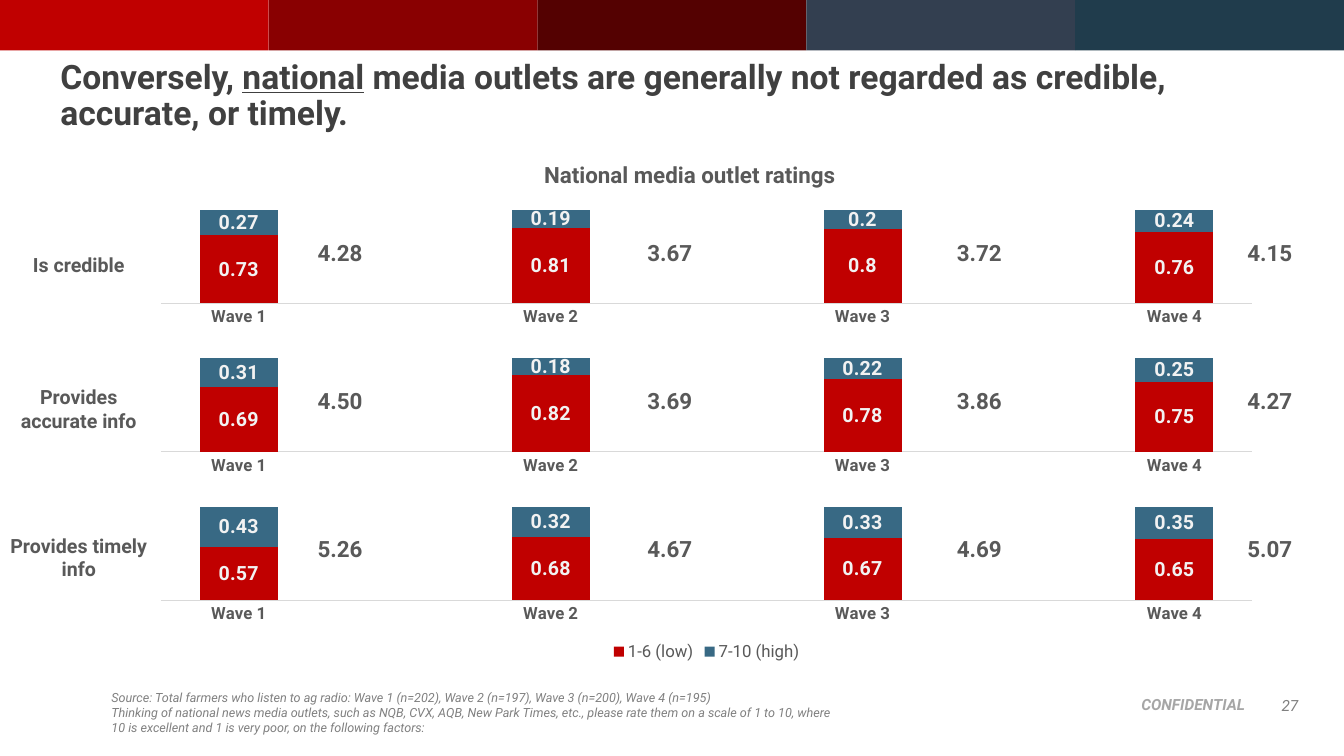
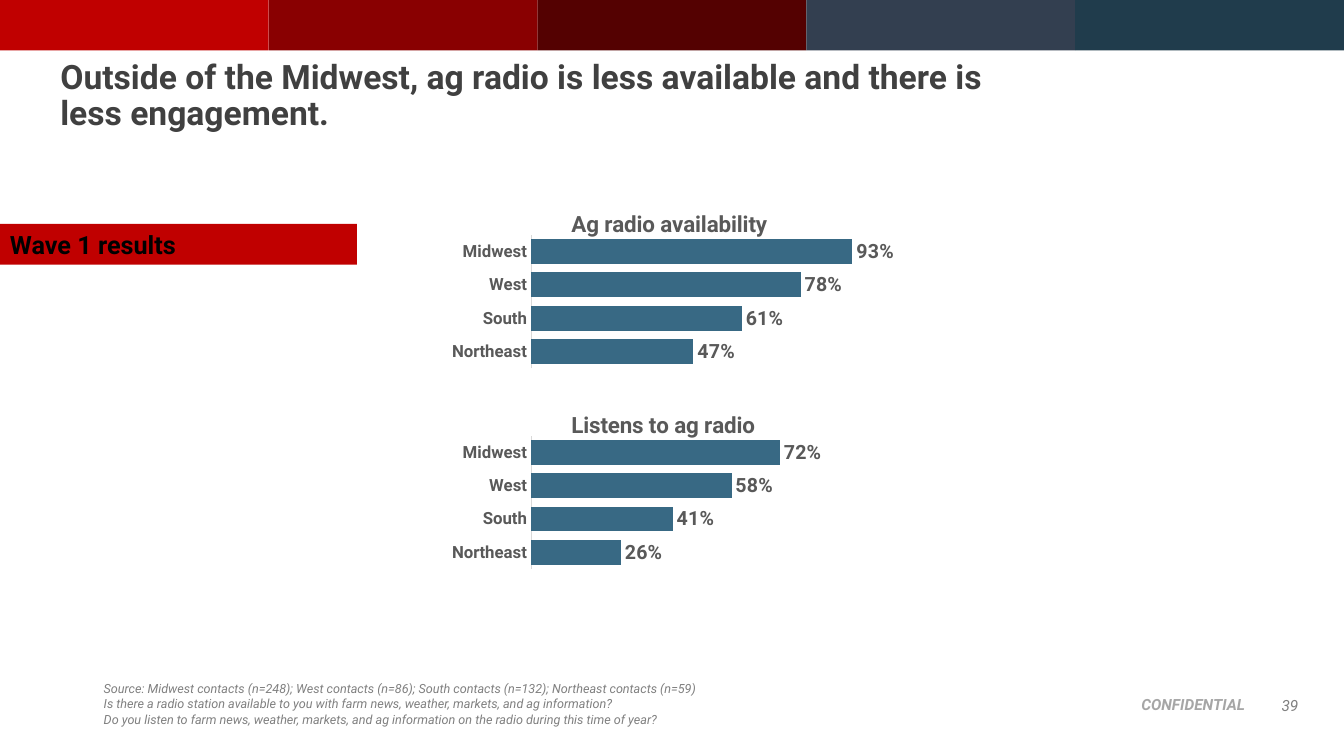
import pptx
import pptx.chart.data
import pptx.dml.color
import pptx.enum.chart
import pptx.enum.shapes
import pptx.enum.text
import pptx.oxml
import pptx.oxml.ns
import pptx.util

Pt = pptx.util.Pt
rgb = pptx.dml.color.RGBColor.from_string
chart_enum = pptx.enum.chart
MIDDLE = pptx.enum.text.MSO_ANCHOR.MIDDLE
LEFT, CENTER, RIGHT = (pptx.enum.text.PP_ALIGN.LEFT, pptx.enum.text.PP_ALIGN.CENTER,
                       pptx.enum.text.PP_ALIGN.RIGHT)

FONT = "Roboto"
RED, BLUE, GRAY = "C00000", "386984", "595959"
BAND_COLORS = [RED, "890001", "540101", "333F50", "203C4C"]

title_style = {"size": Pt(24), "bold": True, "color": "404040"}
heading_style = {"size": Pt(16), "bold": True, "color": GRAY}
label_style = {"size": Pt(14), "bold": True, "color": GRAY}
inside_style = {"size": Pt(14), "bold": True, "color": "F2F2F2"}
axis_style = {"size": Pt(12), "bold": True, "color": GRAY}
legend_style = {"size": Pt(12), "bold": False, "color": GRAY}
chart_style = {"size": Pt(10), "color": "000000"}
banner_style = {"size": Pt(18), "bold": True, "color": "000000"}
source_style = {"size": Pt(9), "italic": True, "color": "808080"}
number_style = {"size": Pt(11), "italic": True, "color": "808080"}
confidential_style = {"size": Pt(11), "bold": True, "italic": True, "color": "A6A6A6"}


def apply_font(font, style):
    font.name = FONT
    for attribute, value in style.items():
        if attribute == "color":
            font.color.rgb = rgb(value)
        else:
            setattr(font, attribute, value)


def write_text(shape, paragraphs, style, align=LEFT, spacing=None):
    frame = shape.text_frame
    frame.word_wrap = True
    for index, text in enumerate(paragraphs):
        paragraph = frame.add_paragraph() if index else frame.paragraphs[0]
        paragraph.alignment = align
        paragraph.line_spacing = spacing
        for line_index, line in enumerate(text.split("\n")):
            if line_index:
                paragraph.add_line_break()
            for piece_index, piece in enumerate(line.split("_")):
                run = paragraph.add_run()
                run.text = piece
                apply_font(run.font, style)
                if piece_index % 2:
                    run.font.underline = True


ROW_TOPS = [142, 248, 354]
ROW_LABELS = [("Is credible", 177), ("Provides accurate info", 271.5),
              ("Provides timely info", 377.5)]
RATING_LEFTS = [204.5, 440, 661, 868.5]
RATINGS = [["4.28", "3.67", "3.72", "4.15"],
           ["4.50", "3.69", "3.86", "4.27"],
           ["5.26", "4.67", "4.69", "5.07"]]
LOW_SHARES = [[0.73, 0.81, 0.8, 0.76],
              [0.69, 0.82, 0.78, 0.75],
              [0.57, 0.68, 0.67, 0.65]]
WAVES = ["Wave 1", "", "Wave 2", "", "Wave 3", "", "Wave 4"]
REGIONS = ["Northeast", "South", "West", "Midwest"]

rating_charts = []
for top, low_shares in zip(ROW_TOPS, LOW_SHARES):
    low, high = [None] * 7, [None] * 7
    low[::2] = low_shares
    high[::2] = [round(1 - share, 2) for share in low_shares]
    is_last = top == ROW_TOPS[-1]
    names = ("1-6 (low)", "7-10 (high)") if is_last else ("Series 1", "Series 2")
    rating_charts.append({"title": None, "top": top, "legend": is_last,
                          "series": [(names[0], low, RED), (names[1], high, BLUE)]})

region_charts = [
    {"title": title, "top": top, "legend": False, "series": [("Series 1", shares, BLUE)]}
    for title, top, shares in [("Ag radio availability", 144, [0.47, 0.61, 0.78, 0.93]),
                               ("Listens to ag radio", 287.5, [0.26, 0.41, 0.58, 0.72])]]

rating_format = {
    "type": chart_enum.XL_CHART_TYPE.COLUMN_STACKED, "categories": WAVES,
    "left": 104.5, "width": 800.5, "height": 121.5, "gap": 100, "overlap": 100,
    "plot": {"x": 0.013, "y": 0.066, "w": 0.974, "h": 0.549},
    "number": "General", "labels": inside_style,
    "position": chart_enum.XL_LABEL_POSITION.CENTER}
region_format = {
    "type": chart_enum.XL_CHART_TYPE.BAR_CLUSTERED, "categories": REGIONS,
    "left": 260.5, "width": 381, "height": 152, "gap": 35, "overlap": 0,
    "plot": {"x": 0.312, "y": 0.156, "w": 0.648, "h": 0.628},
    "number": "0%", "labels": label_style,
    "position": chart_enum.XL_LABEL_POSITION.OUTSIDE_END}

rating_texts = [("National media outlet ratings", 178.5, 111.5, 628.5, 26.5, heading_style)]
for (row_label, label_top), row_top, ratings in zip(ROW_LABELS, ROW_TOPS, RATINGS):
    rating_texts.append((row_label, 0, label_top, 112.5, 24.5, label_style))
    for rating_left, rating in zip(RATING_LEFTS, ratings):
        rating_texts.append((rating, rating_left, row_top + 25, 77, 26.5, heading_style))

pages = [
    {"title": "Conversely, _national_ media outlets are generally not regarded as "
              "credible, accurate, or timely.",
     "number": "27", "format": rating_format, "charts": rating_charts,
     "texts": rating_texts, "banner": None, "source_box": (72.5, 489, 530.5, 40.5),
     "source": [
         "Source: Total farmers who listen to ag radio: Wave 1 (n=202), Wave 2 (n=197), "
         "Wave 3 (n=200), Wave 4 (n=195)",
         "Thinking of national news media outlets, such as NQB, CVX, AQB, New Park Times, "
         "etc., please rate them on a scale of 1 to 10, where 10 is excellent and 1 is "
         "very poor, on the following factors:"]},
    {"title": "Outside of the Midwest, ag radio is less available and there is\n"
              "less engagement.",
     "number": "39", "format": region_format, "charts": region_charts,
     "texts": [], "banner": "Wave 1 results", "source_box": (67, 483, 685.5, 40.5),
     "source": [
         "Source: Midwest contacts (n=248); West contacts (n=86); South contacts (n=132); "
         "Northeast contacts (n=59)",
         "Is there a radio station available to you with farm news, weather, markets, "
         "and ag information?",
         "Do you listen to farm news, weather, markets, and ag information on the radio "
         "during this time of year?"]},
]

deck = pptx.Presentation()
deck.slide_width, deck.slide_height = Pt(960), Pt(540)

for page in pages:
    slide = deck.slides.add_slide(deck.slide_layouts[6])

    blocks = [(192 * i, 0, 192, 36, color) for i, color in enumerate(BAND_COLORS)]
    if page["banner"]:
        blocks.append((0, 160, 255, 29, RED))
    for *box, color in blocks:
        block = slide.shapes.add_shape(pptx.enum.shapes.MSO_SHAPE.RECTANGLE, *map(Pt, box))
        block.shadow.inherit = False
        block.fill.solid()
        block.fill.fore_color.rgb = rgb(color)
        block.line.fill.background()
    if page["banner"]:
        write_text(block, [page["banner"]], banner_style)

    title = slide.shapes.add_textbox(Pt(36), Pt(39.5), Pt(888), Pt(90.5))
    write_text(title, [page["title"]], title_style, spacing=0.9)
    confidential = slide.shapes.add_textbox(Pt(790.5), Pt(493), Pt(106), Pt(21))
    write_text(confidential, ["CONFIDENTIAL"], confidential_style, RIGHT)
    number = slide.shapes.add_textbox(Pt(894), Pt(489), Pt(40.5), Pt(29))
    number.text_frame.vertical_anchor = MIDDLE
    write_text(number, [page["number"]], number_style, RIGHT)
    source = slide.shapes.add_textbox(*map(Pt, page["source_box"]))
    write_text(source, page["source"], source_style)

    look = page["format"]
    for content in page["charts"]:
        data = pptx.chart.data.CategoryChartData(number_format=look["number"])
        data.categories = look["categories"]
        for name, values, color in content["series"]:
            data.add_series(name, values)
        chart = slide.shapes.add_chart(
            look["type"], Pt(look["left"]), Pt(content["top"]), Pt(look["width"]),
            Pt(look["height"]), data).chart
        apply_font(chart.font, chart_style)

        layouts = [("c:plotArea", 0, look["plot"])]
        chart.has_title = bool(content["title"])
        if content["title"]:
            write_text(chart.chart_title, [content["title"]], heading_style, CENTER)
            layouts.append(("c:title", 1, {"x": 0.38, "y": 0.02}))
        for tag, position, places in layouts:
            parent = chart.element.xpath(f"c:chart/{tag}")[0]
            for old_layout in parent.xpath("c:layout"):
                parent.remove(old_layout)
            target = '<c:layoutTarget val="inner"/>' if tag == "c:plotArea" else ""
            modes = "".join(f'<c:{key}Mode val="edge"/>' for key in "xy")
            sizes = "".join(f'<c:{key} val="{value}"/>' for key, value in places.items())
            parent.insert(position, pptx.oxml.parse_xml(
                f'<c:layout {pptx.oxml.ns.nsdecls("c")}><c:manualLayout>'
                f'{target}{modes}{sizes}</c:manualLayout></c:layout>'))

        chart.has_legend = content["legend"]
        if content["legend"]:
            chart.legend.position = chart_enum.XL_LEGEND_POSITION.BOTTOM
            chart.legend.include_in_layout = False
            apply_font(chart.legend.font, legend_style)

        category_axis = chart.category_axis
        category_axis.major_tick_mark = chart_enum.XL_TICK_MARK.NONE
        category_axis.format.line.color.rgb = rgb("D9D9D9")
        category_axis.format.line.width = Pt(0.75)
        apply_font(category_axis.tick_labels.font, axis_style)
        value_settings = {"minimum_scale": 0, "maximum_scale": 1,
                          "has_major_gridlines": False, "visible": False}
        for attribute, value in value_settings.items():
            setattr(chart.value_axis, attribute, value)

        plot = chart.plots[0]
        plot_settings = {"gap_width": look["gap"], "overlap": look["overlap"],
                         "vary_by_categories": False}
        for attribute, value in plot_settings.items():
            setattr(plot, attribute, value)
        for series, (name, values, color) in zip(plot.series, content["series"]):
            series.format.fill.solid()
            series.format.fill.fore_color.rgb = rgb(color)
            label_settings = {"show_value": True, "number_format": look["number"],
                              "number_format_is_linked": False,
                              "position": look["position"]}
            for attribute, value in label_settings.items():
                setattr(series.data_labels, attribute, value)
            apply_font(series.data_labels.font, look["labels"])

    for text, left, top, width, height, style in page["texts"]:
        box = slide.shapes.add_textbox(Pt(left), Pt(top), Pt(width), Pt(height))
        write_text(box, [text], style, CENTER)

deck.save("out.pptx")
